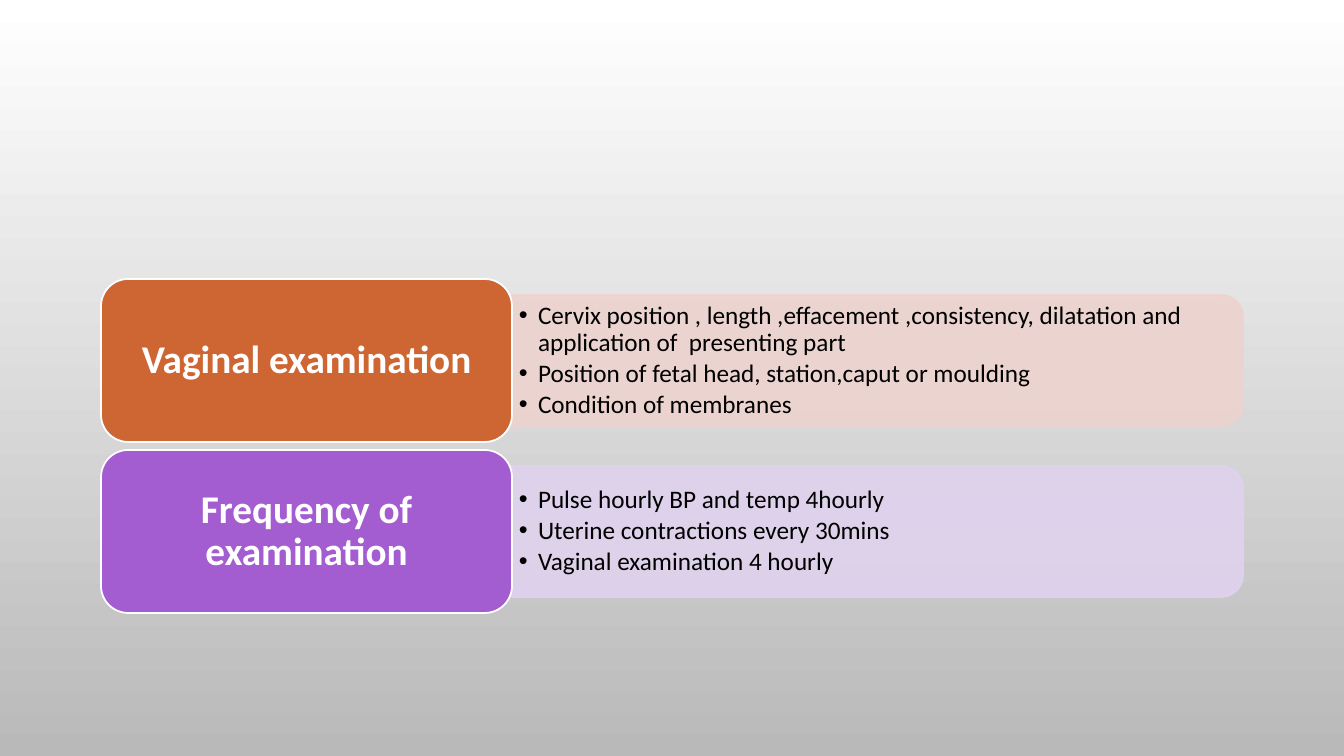
import pptx
import pptx.util
import pptx.dml.color
import pptx.enum.shapes
import pptx.enum.text
import lxml.etree
from pptx.oxml.ns import qn

SCALE = 914400 / 100.8
FONT = "Calibri"
ROW_PITCH = 171
ROWS = [
    ("Vaginal examination", "CE6633", "EDD3CE", [
        "Cervix position , length ,effacement ,consistency, dilatation and application of  presenting part",
        "Position of fetal head, station,caput or moulding",
        "Condition of membranes",
    ]),
    ("Frequency of examination", "A35DD1", "E0D2EE", [
        "Pulse hourly BP and temp 4hourly",
        "Uterine contractions every 30mins",
        "Vaginal examination 4 hourly",
    ]),
]


def px(length):
    return pptx.util.Emu(round(length * SCALE))


def color(value):
    return pptx.dml.color.RGBColor.from_string(value)


def add_shape(page, kind, left, top, width, height, fill, line):
    shape = page.shapes.add_shape(kind, px(left), px(top), px(width), px(height))
    shape.shadow.inherit = False
    shape.fill.solid()
    shape.fill.fore_color.rgb = color(fill)
    shape.line.color.rgb = color(line)
    shape.line.width = pptx.util.Pt(1.25)
    return shape


def set_frame(frame, side, end):
    frame.word_wrap = True
    frame.vertical_anchor = pptx.enum.text.MSO_ANCHOR.MIDDLE
    frame.margin_left = frame.margin_right = px(side)
    frame.margin_top = frame.margin_bottom = px(end)


def format_para(para, size, shade, bold=False):
    para.line_spacing = 0.9
    for span in para.runs:
        span.font.name = FONT
        span.font.size = pptx.util.Pt(size)
        span.font.bold = bold
        span.font.color.rgb = color(shade)


def add_bullet(para, indent):
    properties = para._p.get_or_add_pPr()
    properties.set("marL", str(px(indent)))
    properties.set("indent", str(-px(indent)))
    font = lxml.etree.SubElement(properties, qn("a:buFont"))
    font.set("typeface", "Arial")
    bullet = lxml.etree.SubElement(properties, qn("a:buChar"))
    bullet.set("char", "•")


def add_panel(page, left, top, width, height, tint):
    kind = pptx.enum.shapes.MSO_SHAPE.ROUND_2_SAME_RECTANGLE
    offset = (width - height) / 2
    panel = add_shape(page, kind, left + offset, top - offset, height, width, tint, tint)
    panel.rotation = 90
    for shade in panel._element.spPr.iter(qn("a:srgbClr")):
        lxml.etree.SubElement(shade, qn("a:alpha")).set("val", "90000")


def add_points(page, left, top, width, height, points):
    box = page.shapes.add_textbox(px(left), px(top), px(width), px(height))
    frame = box.text_frame
    set_frame(frame, 7, 4)
    frame.text = "\n".join(points)
    for para in frame.paragraphs:
        add_bullet(para, 19)
        para.space_after = pptx.util.Pt(2.7)
        format_para(para, 18, "000000")


def add_card(page, left, top, width, height, heading, fill):
    kind = pptx.enum.shapes.MSO_SHAPE.ROUNDED_RECTANGLE
    card = add_shape(page, kind, left, top, width, height, fill, "FFFFFF")
    set_frame(card.text_frame, 12, 6)
    card.text_frame.text = heading
    para = card.text_frame.paragraphs[0]
    para.alignment = pptx.enum.text.PP_ALIGN.CENTER
    format_para(para, 28, "FFFFFF", True)


def add_row(page, left, top, width, height, row):
    heading, fill, tint, points = row
    card_width = 411
    panel_left, panel_width = left + card_width, width - card_width
    add_panel(page, panel_left, top + 16, panel_width, height - 32, tint)
    add_points(page, panel_left, top + 22, panel_width - 6, height - 44, points)
    add_card(page, left, top, card_width, height, heading, fill)


def paint_background(page):
    fill = page.background.fill
    fill.gradient()
    fill.gradient_angle = 270
    for stop, shade, position in zip(fill.gradient_stops, ("FFFFFF", "B9B9B9"), (0, 1)):
        stop.color.rgb = color(shade)
        stop.position = position


def main():
    deck = pptx.Presentation()
    deck.slide_width, deck.slide_height = px(1344), px(756)
    page = deck.slides.add_slide(deck.slide_layouts[6])
    paint_background(page)
    for index, row in enumerate(ROWS):
        add_row(page, 101, 279 + index * ROW_PITCH, 1142, 163, row)
    deck.save("out.pptx")


if __name__ == "__main__":
    main()
